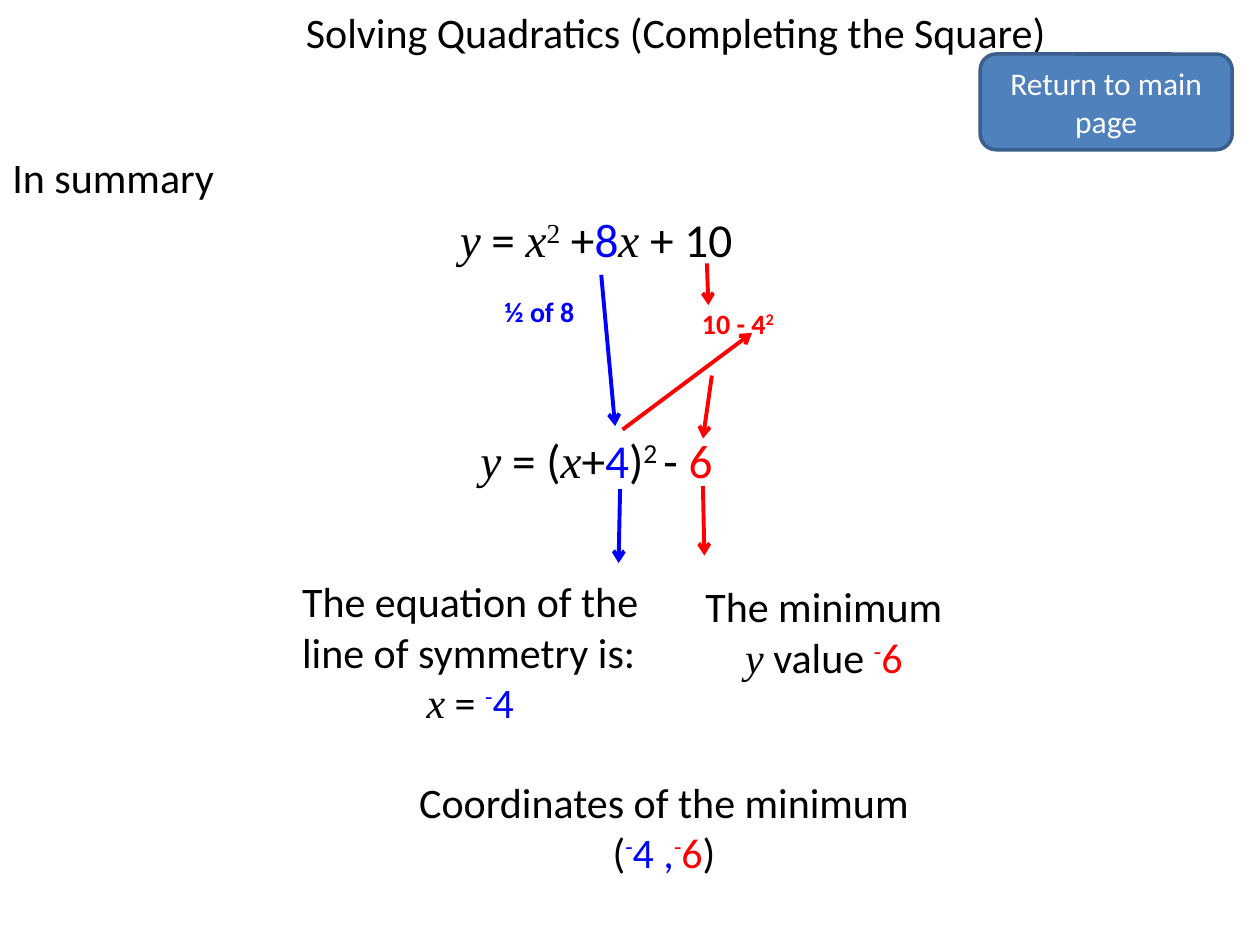
from dataclasses import dataclass
from pptx import Presentation
from pptx.dml.color import RGBColor as Rgb
from pptx.enum.shapes import MSO_CONNECTOR as Conn, MSO_SHAPE as Shape
from pptx.enum.text import MSO_ANCHOR as Anchor, MSO_AUTO_SIZE as Auto, PP_ALIGN as Align
from pptx.oxml.ns import qn
from pptx.util import Cm, Pt
from lxml import etree


@dataclass(frozen=True)
class Theme:
    black: str = "000000"
    white: str = "FFFFFF"
    blue: str = "0000FF"
    red: str = "FF0000"
    fill: str = "4F81BD"
    edge: str = "3A5F8C"
    sans: str = "Calibri"
    serif: str = "Times New Roman"
    note: int = 16
    label: int = 18
    body: int = 24
    maths: int = 27
    line: float = 2.25


T = Theme()
LEFT, MID = Align.LEFT, Align.CENTER
STYLES = {
    "i": {"name": T.serif, "italic": True},
    "t": {"name": T.serif},
    "b": {"color": T.blue},
    "r": {"color": T.red},
    "w": {"color": T.white},
    "h": {"bold": True},
    "^": {"raised": True},
}


def add_run(para, text, marks, size):
    run = para.add_run()
    run.text = text
    values = {"name": T.sans, "size": Pt(size), "color": T.black, "raised": False}
    for mark in marks:
        values.update(STYLES[mark])
    run.font.color.rgb = Rgb.from_string(values.pop("color"))
    if values.pop("raised"):
        run.font._element.set("baseline", "30000")
    for key, value in values.items():
        setattr(run.font, key, value)


def write(frame, lines, size):
    for index, (align, runs) in enumerate(lines):
        para = frame.paragraphs[0] if index == 0 else frame.add_paragraph()
        para.alignment = align
        for text, marks in runs:
            add_run(para, text, marks, size)


def add_text(slide, origin, box, lines, size, wrap=False):
    x, y, w, h = box
    area = slide.shapes.add_textbox(Cm(origin[0] + x), Cm(origin[1] + y), Cm(w), Cm(h))
    frame = area.text_frame
    frame.word_wrap = wrap
    frame.auto_size = Auto.SHAPE_TO_FIT_TEXT
    write(frame, lines, size)


def add_arrow(slide, origin, ends, color):
    x, y = origin
    a, b, c, d = ends
    arrow = slide.shapes.add_connector(Conn.STRAIGHT, Cm(x + a), Cm(y + b), Cm(x + c), Cm(y + d))
    arrow.line.width = Pt(T.line)
    arrow.line.color.rgb = Rgb.from_string(color)
    etree.SubElement(arrow.line._get_or_add_ln(), qn("a:tailEnd"), type="arrow")
    etree.SubElement(arrow._element.spPr, qn("a:effectLst"))


def add_button(slide, origin, box, text):
    x, y, w, h = box
    button = slide.shapes.add_shape(
        Shape.ROUNDED_RECTANGLE, Cm(origin[0] + x), Cm(origin[1] + y), Cm(w), Cm(h))
    button.shadow.inherit = False
    button.fill.solid()
    button.fill.fore_color.rgb = Rgb.from_string(T.fill)
    button.line.color.rgb = Rgb.from_string(T.edge)
    button.line.width = Pt(2)
    button.text_frame.word_wrap = True
    button.text_frame.vertical_anchor = Anchor.MIDDLE
    write(button.text_frame, [(MID, [(text, "w")])], T.label)


def add_header(slide, origin):
    title = [(MID, [("Solving Quadratics (Completing the Square)", "")])]
    add_text(slide, origin, (5.66, 0, 15.93, 1.27), title, T.body, True)
    add_button(slide, origin, (19.76, 1.09, 5.08, 1.93), "Return to main page")
    add_text(slide, origin, (0, 2.92, 4.95, 1.27), [(LEFT, [("In summary", "")])], T.body, True)


def add_working(slide, origin):
    start = [("y", "i"), (" = ", ""), ("x", "i"), ("2", "t^"), (" +", ""),
             ("8", "b"), ("x", "i"), (" + 10", "")]
    square = [("y", "i"), (" = (", ""), ("x", "i"), ("+", ""), ("4", "b"),
              (")", ""), ("2 ", "^"), ("- ", ""), ("6", "r")]
    half = [("½ of 8", "bh")]
    rest = [("10 - 4", "rh"), ("2", "rh^")]
    add_text(slide, origin, (0.02, 0.11, 6.2, 1.42), [(LEFT, start)], T.maths, True)
    for box, runs, size in (
        ((0.37, 4.56, 5.31, 1.42), square, T.maths),
        ((0.91, 1.82, 1.93, 0.94), half, T.note),
        ((4.87, 2.05, 2.01, 0.94), rest, T.note),
    ):
        add_text(slide, origin, box, [(MID, runs)], size)
    for ends, color in (
        ((3.12, 1.54, 3.4, 4.59), T.blue),
        ((5.25, 1.31, 5.28, 2.15), T.red),
        ((3.55, 4.66, 6.16, 2.71), T.red),
        ((5.35, 3.57, 5.17, 4.84), T.red),
        ((3.5, 5.86, 3.47, 7.35), T.blue),
        ((5.17, 5.8, 5.2, 7.2), T.red),
    ):
        add_arrow(slide, origin, ends, color)


def add_results(slide, origin):
    axis = [(LEFT, [("The equation of the", "")]),
            (LEFT, [("line of symmetry is:", "")]),
            (MID, [("x", "i"), (" = ", ""), ("-", "b^"), ("4", "b")])]
    lowest = [(LEFT, [("The minimum", "")]),
              (MID, [("y", "i"), (" value ", ""), ("-", "r^"), ("6", "r")])]
    point = [(LEFT, [("Coordinates of the minimum", "")]),
             (MID, [("(", ""), ("-", "b^"), ("4 ,", "b"), ("-", "r^"), ("6", "r"), (")", "")])]
    for box, lines in (
        ((0.04, 0.08, 7.47, 3.33), axis),
        ((8.17, 0.18, 5.54, 2.31), lowest),
        ((2.4, 4.12, 10.46, 2.31), point),
    ):
        add_text(slide, origin, box, lines, T.body)


def main():
    deck = Presentation()
    deck.slide_width, deck.slide_height = Cm(25.4), Cm(19.05)
    slide = deck.slides.add_slide(deck.slide_layouts[6])
    add_header(slide, (0, 0))
    add_working(slide, (9, 4))
    add_results(slide, (5.8, 11.4))
    deck.save("out.pptx")


if __name__ == "__main__":
    main()
